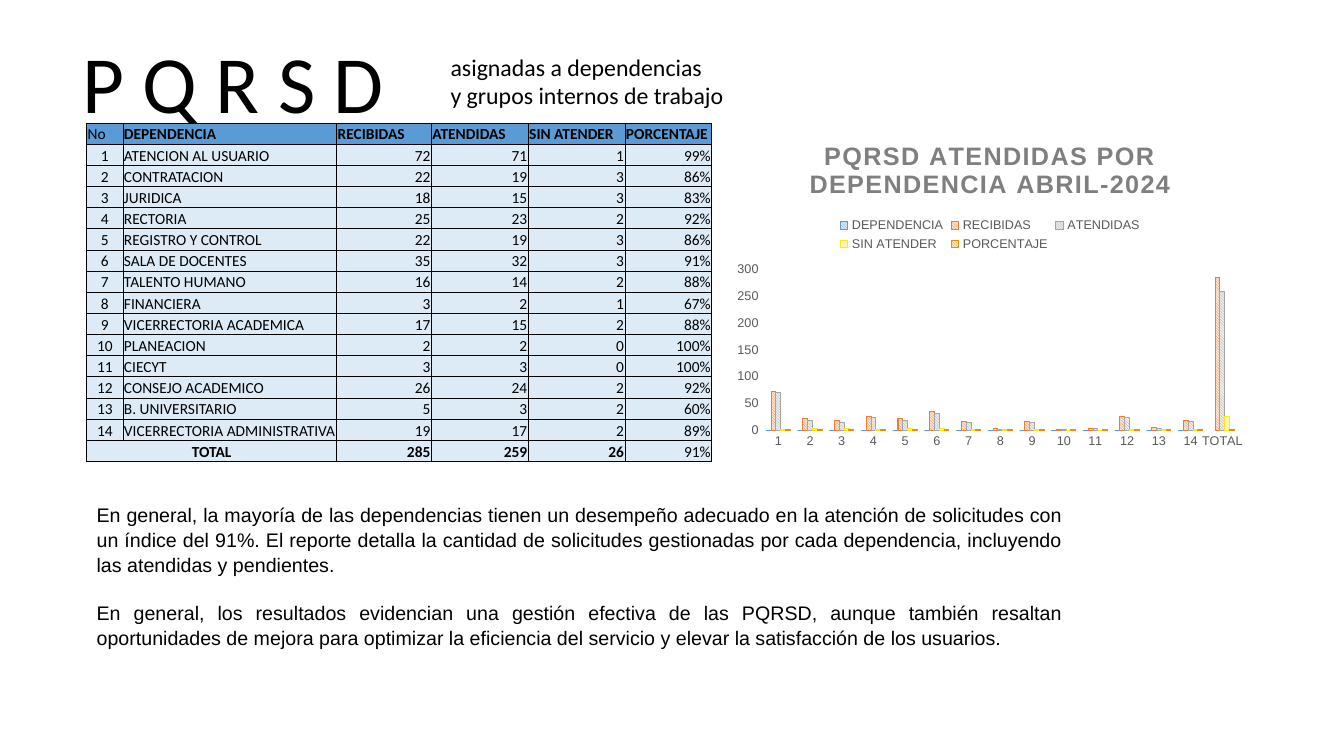
from lxml import etree
from pptx import Presentation
from pptx.chart.data import CategoryChartData
from pptx.dml.color import RGBColor
from pptx.enum.chart import XL_CHART_TYPE, XL_LEGEND_POSITION, XL_TICK_MARK
from pptx.enum.dml import MSO_PATTERN
from pptx.enum.text import MSO_ANCHOR, PP_ALIGN
from pptx.oxml.ns import qn
from pptx.util import Inches, Pt

LEFT, RIGHT, MID, JUST = PP_ALIGN.LEFT, PP_ALIGN.RIGHT, PP_ALIGN.CENTER, PP_ALIGN.JUSTIFY
TOP, LOW = MSO_ANCHOR.TOP, MSO_ANCHOR.BOTTOM
COLUMNS = XL_CHART_TYPE.COLUMN_CLUSTERED
ABOVE = XL_LEGEND_POSITION.TOP
NO_TICK = XL_TICK_MARK.NONE
HATCH = MSO_PATTERN.LIGHT_DOWNWARD_DIAGONAL

# Content
TITLE = "P Q R S D"
INTRO = ["asignadas a dependencias", "y grupos internos de trabajo"]
HEAD = ["No", "DEPENDENCIA", "RECIBIDAS", "ATENDIDAS", "SIN ATENDER", "PORCENTAJE"]
UNITS = [
    ("ATENCION AL USUARIO", 72, 71), ("CONTRATACION", 22, 19),
    ("JURIDICA", 18, 15), ("RECTORIA", 25, 23),
    ("REGISTRO Y CONTROL", 22, 19), ("SALA DE DOCENTES", 35, 32),
    ("TALENTO HUMANO", 16, 14), ("FINANCIERA", 3, 2),
    ("VICERRECTORIA ACADEMICA", 17, 15), ("PLANEACION", 2, 2),
    ("CIECYT", 3, 3), ("CONSEJO ACADEMICO", 26, 24),
    ("B. UNIVERSITARIO", 5, 3), ("VICERRECTORIA ADMINISTRATIVA", 19, 17),
]
CHART_TITLE = "PQRSD ATENDIDAS POR DEPENDENCIA ABRIL-2024"
NOTES = [
    "En general, la mayoría de las dependencias tienen un desempeño adecuado en la "
    "atención de solicitudes con un índice del 91%. El reporte detalla la cantidad de "
    "solicitudes gestionadas por cada dependencia, incluyendo las atendidas y pendientes.",
    "En general, los resultados evidencian una gestión efectiva de las PQRSD, aunque "
    "también resaltan oportunidades de mejora para optimizar la eficiencia del servicio "
    "y elevar la satisfacción de los usuarios.",
]

# Layout in inches
EDGE, LINE = 0.86, 1.22
WIDTHS = [0.36, 2.12, 0.94, 0.96, 0.96, 0.86]
ROW = 0.21
PAIRS = [("5B9BD5", "DEEBF7"), ("ED7D31", "FBE5D6"), ("A5A5A5", "EDEDED"),
         ("FDE918", "FFFBD1"), ("EC8D08", "FDE9CC")]


def rgb(code):
    return RGBColor.from_string(code)


def style(font, size, face, color="000000", bold=False):
    font.size, font.name, font.bold = Pt(size), face, bold
    font.color.rgb = rgb(color)


def write(frame, lines, size, face, align=LEFT, wrap=True):
    frame.word_wrap = wrap
    frame.vertical_anchor = TOP
    for i, line in enumerate(lines):
        para = frame.add_paragraph() if i else frame.paragraphs[0]
        para.text, para.alignment = line, align
        style(para.font, size, face)


def border(cell):
    props = cell._tc.get_or_add_tcPr()
    for i, side in enumerate(("lnL", "lnR", "lnT", "lnB")):
        edge = etree.Element(qn("a:" + side), w=str(Pt(0.5)))
        fill = etree.SubElement(edge, qn("a:solidFill"))
        etree.SubElement(fill, qn("a:srgbClr"), val="000000")
        props.insert(i, edge)


def fill_cell(cell, text, color, align, bold):
    cell.margin_left = cell.margin_right = cell.margin_top = Inches(0.01)
    cell.margin_bottom = 0
    cell.vertical_anchor = LOW
    cell.fill.solid()
    cell.fill.fore_color.rgb = rgb(color)
    border(cell)
    para = cell.text_frame.paragraphs[0]
    para.text, para.alignment = str(text), align
    style(para.font, 11, "Calibri", bold=bold)


def add_grid(slide, rows):
    table = slide.shapes.add_table(
        len(rows), len(WIDTHS), Inches(EDGE), Inches(LINE),
        Inches(sum(WIDTHS)), Inches(ROW * len(rows))).table
    for col, width in zip(table.columns, WIDTHS):
        col.width = Inches(width)
    last = len(rows) - 1
    for r, row in enumerate(rows):
        table.rows[r].height = Inches(ROW)
        for c, text in enumerate(row):
            align = LEFT if r == 0 or c == 1 else MID if c == 0 else RIGHT
            bold = (r == 0 and c > 0) or (r == last and c < 5)
            fill_cell(table.cell(r, c), text, "DDEBF7" if r else "5B9BD5", align, bold)
    table.cell(last, 0).merge(table.cell(last, 1))


def add_bars(slide, cats, series):
    data = CategoryChartData()
    data.categories = cats
    for name, vals in series:
        data.add_series(name, vals)
    chart = slide.shapes.add_chart(COLUMNS, Inches(7.21), Inches(LINE),
                                   Inches(5.22), Inches(3.3), data).chart
    style(chart.font, 10, "Arial")

    # Chart title and legend
    chart.has_title = True
    para = chart.chart_title.text_frame.paragraphs[0]
    run = para.add_run()
    run.text = CHART_TITLE
    style(run.font, 18, "Arial", "7F7F7F", True)
    run.font._element.set("spc", "100")
    chart.chart_title.include_in_layout = False
    chart.has_legend = True
    chart.legend.position = ABOVE
    chart.legend.include_in_layout = False
    style(chart.legend.font, 9, "Arial", "595959")

    # Axes
    for axis in (chart.category_axis, chart.value_axis):
        axis.has_major_gridlines = False
        axis.major_tick_mark = axis.minor_tick_mark = NO_TICK
        axis.format.line.fill.background()
        style(axis.tick_labels.font, 9, "Arial", "595959")

    # Hatched columns
    plot = chart.plots[0]
    plot.gap_width, plot.overlap, plot.vary_by_categories = 160, 0, False
    for bars, (dark, pale) in zip(plot.series, PAIRS):
        bars.invert_if_negative = False
        fill, line = bars.format.fill, bars.format.line
        fill.patterned()
        fill.pattern = HATCH
        fill.fore_color.rgb, fill.back_color.rgb = rgb(dark), rgb(pale)
        line.color.rgb, line.width = rgb(dark), Pt(0.75)


def main():
    deck = Presentation()
    deck.slide_width, deck.slide_height = Inches(13.33), Inches(7.5)
    slide = deck.slides.add_slide(deck.slide_layouts[5])

    # Title and intro
    title = slide.shapes.title
    title.left, title.top = Inches(0.72), Inches(0.27)
    title.width, title.height = Inches(3.26), Inches(1.08)
    write(title.text_frame, [TITLE], 58, "Calibri", wrap=False)
    intro = slide.shapes.add_textbox(Inches(4.37), Inches(0.47), Inches(3.21), Inches(0.67))
    write(intro.text_frame, INTRO, 17, "Calibri")

    # Table rows and totals
    got = [unit[1] for unit in UNITS]
    done = [unit[2] for unit in UNITS]
    names = [unit[0] for unit in UNITS] + [""]
    marks = list(range(1, len(UNITS) + 1)) + ["TOTAL"]
    got.append(sum(got))
    done.append(sum(done))
    left = [a - b for a, b in zip(got, done)]
    rates = [f"{b / a:.0%}" for a, b in zip(got, done)]
    add_grid(slide, [HEAD, *zip(marks, names, got, done, left, rates)])

    # Chart
    blank = [0] * len(UNITS) + [None]
    whole = [1] * len(marks)
    add_bars(slide, [str(mark) for mark in marks],
             list(zip(HEAD[1:], (blank, got, done, left, whole))))

    # Closing notes
    notes = slide.shapes.add_textbox(Inches(EDGE), Inches(4.93), Inches(9.78), Inches(1.75))
    write(notes.text_frame, NOTES, 14, "Arial", JUST)
    for para in notes.text_frame.paragraphs:
        para.line_spacing = 1.05
    para.space_before = Pt(17)

    deck.save("out.pptx")


if __name__ == "__main__":
    main()
